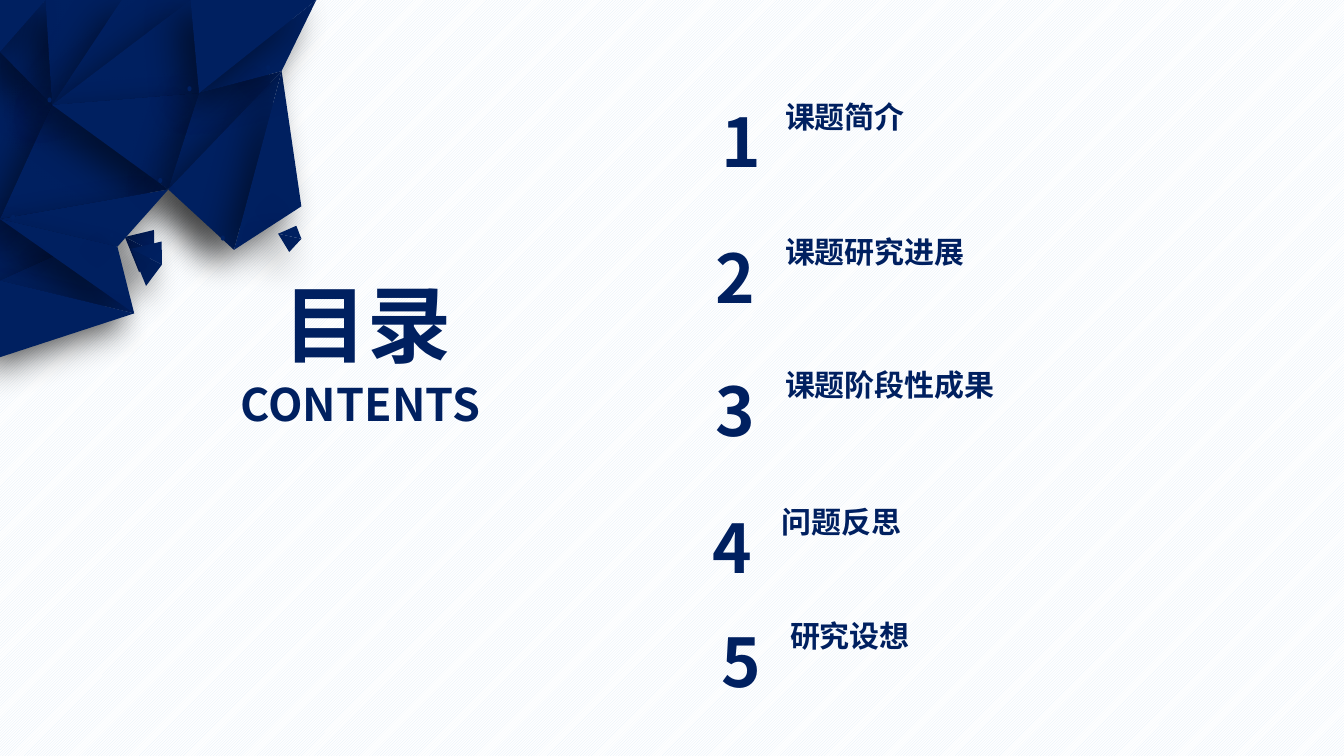
from dataclasses import dataclass

from lxml import etree
from pptx import Presentation
from pptx import util as u
from pptx.dml.color import RGBColor
from pptx.enum import dml, shapes, text
from pptx.oxml.ns import qn

Pt = u.Pt


@dataclass(frozen=True)
class Theme:
    navy: str = "002060"
    shadow: str = "000000"
    stripe: str = "DEEBF7"
    ground: str = "FFFFFF"
    font: str = "Noto Sans CJK SC"
    title: float = 60
    subtitle: float = 32
    number: float = 48
    topic: float = 21.4


THEME = Theme()

# Corners of the faceted shape, in points
CORNERS = {
    "a": (0, 0), "b": (31, 0), "c": (82.8, 0), "d": (129.6, 0), "e": (215.2, 0),
    "f": (0, 35.4), "g": (35.4, 71.4), "h": (135.4, 63.4), "i": (191.6, 48.4),
    "j": (114.5, 128.9), "k": (0, 149), "l": (79.9, 167.8), "m": (64.8, 161.4),
    "n": (159.2, 170), "o": (205, 140.4), "p": (0, 190.8), "q": (91.3, 213.2),
    "r": (0, 243),
    "s": (99.4, 194.5), "t": (89.2, 169.3), "u": (110.2, 180), "v": (110, 164.3),
}
FACETS = ("kpm pqm fkg kjg gbf gcb gdc dhg jgh jih jni noi hei deh "
          "stu tvu baf jlk lqk prq").split()
LAYER_SCALES = (1, 1.05)

SHARD = [[(206.6, 180), (198.7, 167), (215.3, 170.6)],
         [(198.7, 167), (211.7, 161.3), (215.3, 170.6)]]

# Centres of the small dots on the corners
DOTS = [CORNERS[name] for name in "ihjg"] + [(36, 174.6), (9.4, 155.2)] + [
    CORNERS[name] for name in "lno"]
DOT_SIZE = (2.9, 3.6)

# Number position and wording of each entry
ENTRIES = [
    (508.3, 68.4, "课题简介"),
    (504, 165, "课题研究进展"),
    (504, 260, "课题阶段性成果"),
    (501.8, 358, "问题反思"),
    (508.3, 439.4, "研究设想"),
]
TOPIC_LEFTS = (553.7, 553.7, 553.7, 551.5, 557.3)
TOPIC_RISE = 6.8


def color(value):
    return RGBColor.from_string(value)


def style_facet(shape):
    """Navy fill, no line, soft shadow to the lower left."""
    shape.fill.solid()
    shape.fill.fore_color.rgb = color(THEME.navy)
    shape.line.fill.background()
    shape.shadow.inherit = False
    effects = shape._element.spPr.find(qn("a:effectLst"))
    shadow = etree.SubElement(
        effects, qn("a:outerShdw"), blurRad=str(Pt(25)), dist=str(Pt(15)),
        dir=str(135 * 60000), algn="tr", rotWithShape="0")
    tint = etree.SubElement(shadow, qn("a:srgbClr"), val=THEME.shadow)
    etree.SubElement(tint, qn("a:alpha"), val="50000")


def add_facet(group, points):
    first, *others = [(Pt(x), Pt(y)) for x, y in points]
    builder = group.shapes.build_freeform(*first)
    builder.add_line_segments(others, close=True)
    style_facet(builder.convert_to_shape())


def add_dot(group, center):
    (x, y), (width, height) = center, DOT_SIZE
    style_facet(group.shapes.add_shape(
        shapes.MSO_SHAPE.OVAL, Pt(x - width / 2), Pt(y - height / 2),
        Pt(width), Pt(height)))


def write(box, words, size, wrap=False, spacing=None):
    frame = box.text_frame
    frame.word_wrap = wrap
    frame.vertical_anchor = text.MSO_ANCHOR.TOP
    para = frame.paragraphs[0]
    para.alignment = text.PP_ALIGN.LEFT
    para.line_spacing = spacing
    span = para.add_run()
    span.text = words
    span.font.size = Pt(size)
    span.font.bold = True
    span.font.name = THEME.font
    span.font.color.rgb = color(THEME.navy)
    properties = span.font._element
    etree.SubElement(properties, qn("a:ea"), typeface=THEME.font)
    return frame


def add_text(page, left, top, width, height, *args, **options):
    box = page.shapes.add_textbox(Pt(left), Pt(top), Pt(width), Pt(height))
    return write(box, *args, **options)


def add_entry(page, number, left, top, topic_left, words):
    add_text(page, left, top, 31.7, 48.2, str(number), THEME.number)
    frame = add_text(page, topic_left, top - TOPIC_RISE, 311.8, 36, words,
                     THEME.topic, wrap=True, spacing=1.2)
    frame.auto_size = text.MSO_AUTO_SIZE.SHAPE_TO_FIT_TEXT


def add_crystal(page):
    group = page.shapes.add_group_shape()
    for scale in LAYER_SCALES:
        for facet in FACETS:
            add_facet(group, [(CORNERS[name][0] * scale, CORNERS[name][1] * scale)
                              for name in facet])
    for points in SHARD:
        add_facet(group, points)
    for center in DOTS:
        add_dot(group, center)


def main():
    deck = Presentation()
    deck.slide_width, deck.slide_height = Pt(960), Pt(540)
    page = deck.slides.add_slide(deck.slide_layouts[5])

    # Striped background
    fill = page.background.fill
    fill.patterned()
    fill.pattern = dml.MSO_PATTERN.DARK_UPWARD_DIAGONAL
    fill.fore_color.rgb = color(THEME.stripe)
    fill.back_color.rgb = color(THEME.ground)

    add_crystal(page)

    # Heading
    title = page.shapes.title
    title.left, title.top, title.width, title.height = (
        Pt(195.1), Pt(190.8), Pt(135.4), Pt(79.9))
    frame = write(title, "目录", THEME.title)
    frame.auto_size = text.MSO_AUTO_SIZE.SHAPE_TO_FIT_TEXT
    frame = add_text(page, 164.9, 265.7, 195.1, 46.1, "CONTENTS", THEME.subtitle)
    frame.auto_size = text.MSO_AUTO_SIZE.SHAPE_TO_FIT_TEXT

    # Numbered entries
    for number, ((left, top, words), topic_left) in enumerate(
            zip(ENTRIES, TOPIC_LEFTS), start=1):
        add_entry(page, number, left, top, topic_left, words)

    deck.save("out.pptx")


if __name__ == "__main__":
    main()
